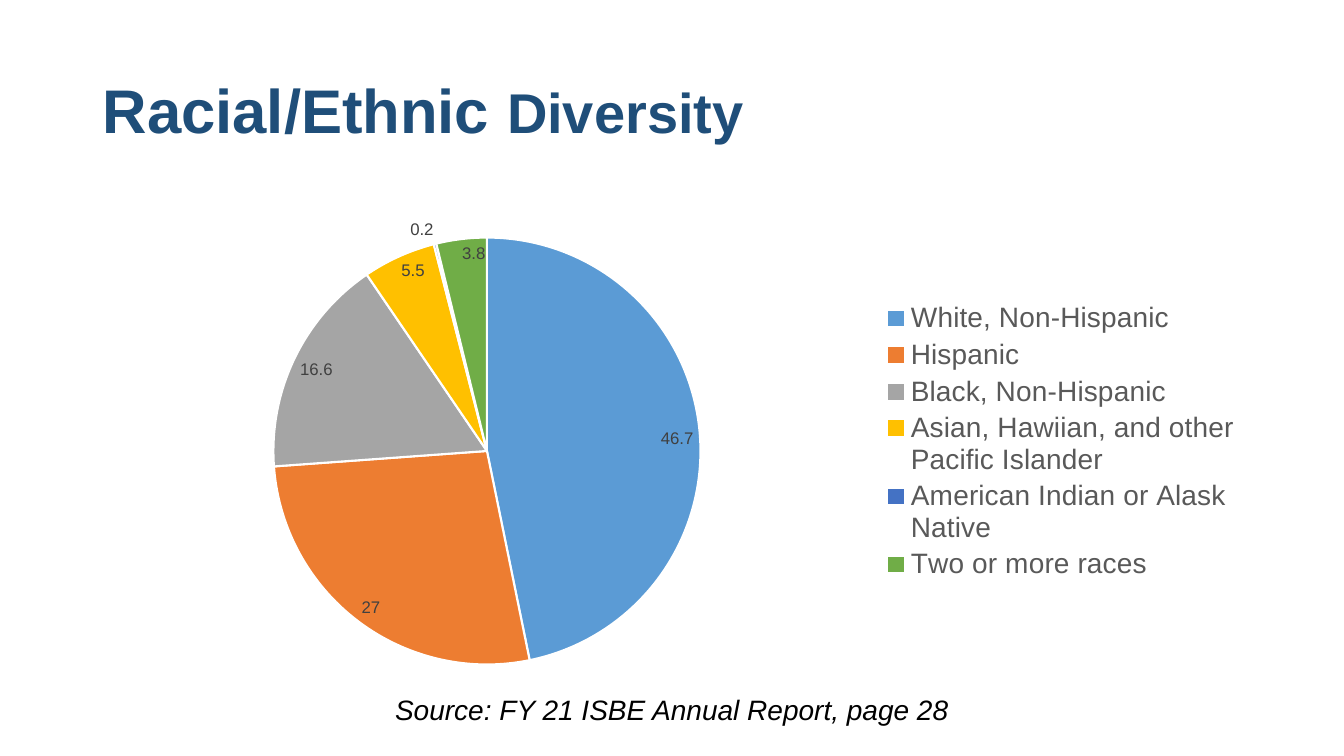
from lxml import etree
from pptx import Presentation
from pptx.chart.data import CategoryChartData
from pptx.dml.color import RGBColor
from pptx.enum.chart import XL_CHART_TYPE, XL_LABEL_POSITION, XL_LEGEND_POSITION
from pptx.enum.text import MSO_ANCHOR, PP_ALIGN
from pptx.oxml.ns import qn
from pptx.util import Inches, Pt

PIE = XL_CHART_TYPE.PIE
INSIDE = XL_LABEL_POSITION.INSIDE_END
OUTSIDE = XL_LABEL_POSITION.OUTSIDE_END
RIGHT = XL_LEGEND_POSITION.RIGHT
MIDDLE = MSO_ANCHOR.MIDDLE
CENTER = PP_ALIGN.CENTER

FACE = "Arial"
NAVY = RGBColor(0x1F, 0x4E, 0x79)
BLACK = RGBColor(0x00, 0x00, 0x00)
WHITE = RGBColor(0xFF, 0xFF, 0xFF)
DARK = RGBColor(0x40, 0x40, 0x40)
GRAY = RGBColor(0x59, 0x59, 0x59)

GROUPS = [
    ("White, Non-Hispanic", 46.7, RGBColor(0x5B, 0x9B, 0xD5)),
    ("Hispanic", 27, RGBColor(0xED, 0x7D, 0x31)),
    ("Black, Non-Hispanic", 16.6, RGBColor(0xA5, 0xA5, 0xA5)),
    ("Asian, Hawiian, and other Pacific Islander", 5.5, RGBColor(0xFF, 0xC0, 0x00)),
    ("American Indian or Alask Native", 0.2, RGBColor(0x44, 0x72, 0xC4)),
    ("Two or more races", 3.8, RGBColor(0x70, 0xAD, 0x47)),
]
SMALL = 1


def style(font, size, color):
    """Set face, size and colour of a font."""
    font.name = FACE
    font.size = Pt(size)
    font.color.rgb = color


def place(layout, x, y, w, h, inner=False):
    """Fix a chart part at fractions of the chart area."""
    for old in list(layout):
        layout.remove(old)
    manual = etree.SubElement(layout, qn("c:manualLayout"))
    rules = [("layoutTarget", "inner")] if inner else []
    rules += [("xMode", "edge"), ("yMode", "edge"),
              ("x", x), ("y", y), ("w", w), ("h", h)]
    for name, val in rules:
        etree.SubElement(manual, qn("c:" + name)).set("val", str(val))


def add_title(slide, box):
    """Write the two-size heading in the box."""
    frame = slide.shapes.add_textbox(*box).text_frame
    frame.word_wrap = True
    frame.vertical_anchor = MIDDLE
    line = frame.paragraphs[0]
    line.line_spacing = 0.9
    for text, size in (("Racial/Ethnic ", 44), ("Diversity", 40)):
        run = line.add_run()
        run.text = text
        style(run.font, size, NAVY)
        run.font.bold = True


def add_pie(slide, box):
    """Draw the pie with its labels and legend in the box."""
    data = CategoryChartData()
    data.categories = [name for name, _, _ in GROUPS]
    data.add_series("Series 1", [val for _, val, _ in GROUPS])
    chart = slide.shapes.add_chart(PIE, *box, data).chart
    chart.has_title = False
    style(chart.font, 10, BLACK)

    plot = chart.plots[0]
    plot.vary_by_categories = True
    series = plot.series[0]
    labels = series.data_labels
    labels.show_value = True
    labels.position = INSIDE
    style(labels.font, 12, DARK)
    for i, (_, val, color) in enumerate(GROUPS):
        point = series.points[i]
        point.format.fill.solid()
        point.format.fill.fore_color.rgb = color
        point.format.line.color.rgb = WHITE
        point.format.line.width = Pt(1.5)
        if val < SMALL:
            style(point.data_label.font, 12, DARK)
            point.data_label.position = OUTSIDE

    chart.has_legend = True
    legend = chart.legend
    legend.position = RIGHT
    legend.include_in_layout = False
    style(legend.font, 20, GRAY)

    area = chart.element.find(".//" + qn("c:plotArea"))
    layout = area.find(qn("c:layout"))
    if layout is None:
        layout = etree.Element(qn("c:layout"))
        area.insert(0, layout)
    place(layout, 0.155, 0.075, 0.37, 0.89, inner=True)
    key = chart.element.find(".//" + qn("c:legend"))
    layout = key.find(qn("c:layout"))
    if layout is None:
        layout = etree.Element(qn("c:layout"))
        key.find(qn("c:legendPos")).addnext(layout)
    place(layout, 0.68, 0.2, 0.31, 0.6)


def add_source(slide, box):
    """Write the centred source line in the box."""
    frame = slide.shapes.add_textbox(*box).text_frame
    frame.word_wrap = True
    frame.text = "Source: FY 21 ISBE Annual Report, page 28"
    line = frame.paragraphs[0]
    line.alignment = CENTER
    style(line.runs[0].font, 20, BLACK)
    line.runs[0].font.italic = True


def main():
    """Build the slide and save it."""
    deck = Presentation()
    deck.slide_width = Inches(13.33)
    deck.slide_height = Inches(7.5)
    slide = deck.slides.add_slide(deck.slide_layouts[6])
    left, width = Inches(0.92), Inches(11.5)
    add_title(slide, (left, Inches(0.4), width, Inches(1.45)))
    add_pie(slide, (left, Inches(2), width, Inches(4.76)))
    add_source(slide, (Inches(3), Inches(6.82), Inches(7.33), Inches(0.44)))
    deck.save("out.pptx")


if __name__ == "__main__":
    main()
